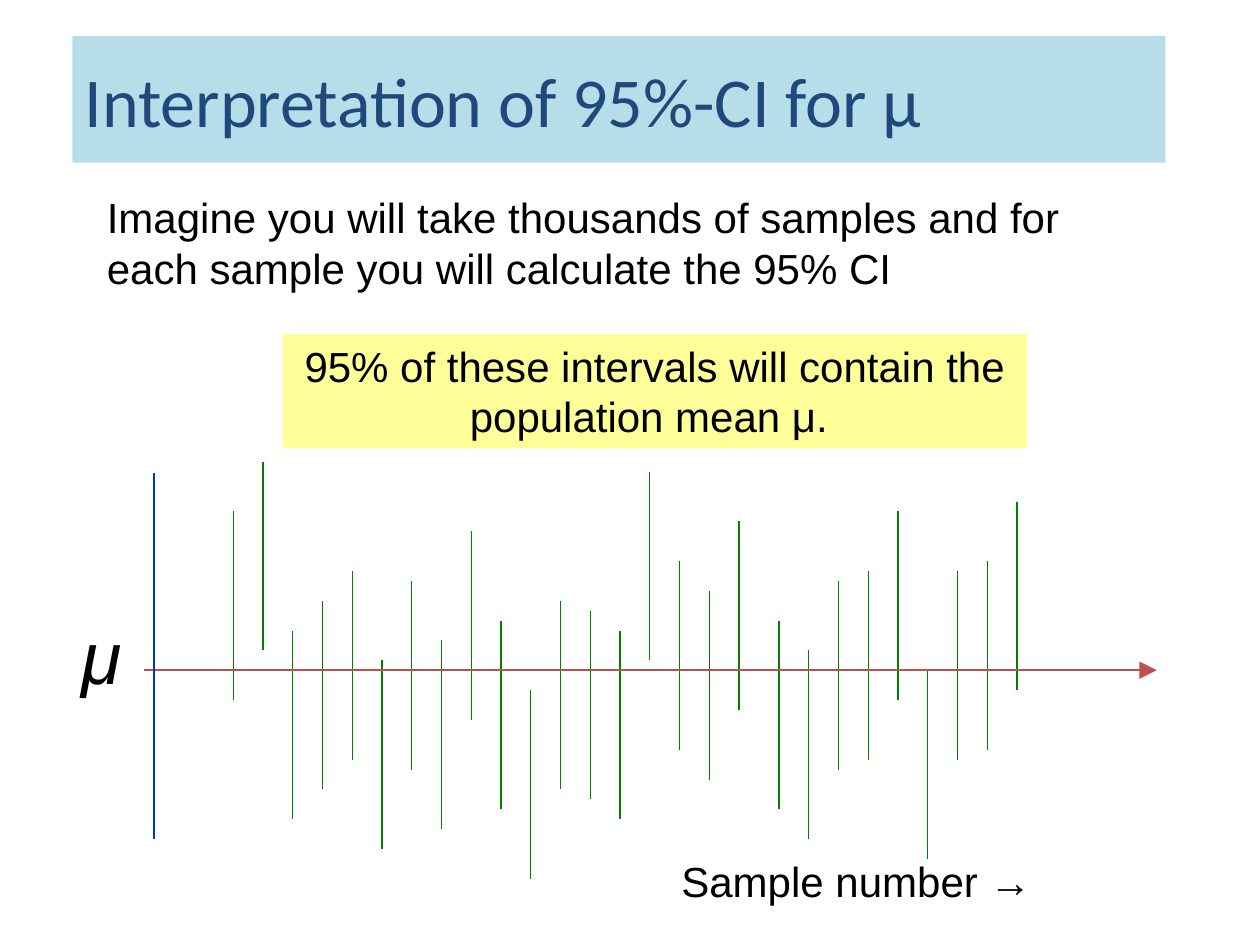
from dataclasses import dataclass

from lxml.etree import SubElement
from pptx import Presentation
from pptx.dml.color import RGBColor
from pptx.enum.shapes import MSO_CONNECTOR, MSO_SHAPE
from pptx.enum.text import MSO_ANCHOR, PP_ALIGN
from pptx.oxml.ns import qn
from pptx.slide import Slide
from pptx.util import Pt

COLORS = {
    "title_fill": "B7DEE8",
    "title_text": "1F497D",
    "note_fill": "FFFF99",
    "text": "000000",
    "interval": "008000",
    "mean": "C0504D",
    "axis": "0033CC",
}
MEAN_Y = 383
LEVEL_STEP = 5.67
INTERVAL_LENGTH = 107.8
INTERVAL_GAP = 17


@dataclass
class TextBlock:
    text: str
    left: float
    top: float
    width: float
    height: float
    size: float = 24
    font: str = "Arial"
    color: str = "text"
    fill: str | None = None
    align: PP_ALIGN = PP_ALIGN.LEFT
    anchor: MSO_ANCHOR = MSO_ANCHOR.TOP
    space_before: float = 0
    italic: bool = False
    inset: bool = True


@dataclass
class Line:
    start_x: float
    start_y: float
    end_x: float
    end_y: float
    color: str
    width: float
    arrow: bool = False


@dataclass
class IntervalRun:
    left: float
    levels: tuple[int, ...]


TITLE = TextBlock("Interpretation of 95%-CI for µ", 41.3, 20.5, 624.6, 72.5, size=40,
                  font="Calibri", color="title_text", fill="title_fill",
                  anchor=MSO_ANCHOR.MIDDLE)
LABELS = (
    TextBlock("Imagine you will take thousands of samples and for each sample "
              "you will calculate the 95% CI", 54, 106, 607, 65.5),
    TextBlock("μ", 46.8, 349.2, 49.7, 60.5, size=42, space_before=5,
              italic=True, inset=False),
    TextBlock("Sample number →", 382.3, 485.3, 295.2, 36, space_before=3),
)
NOTE = TextBlock("95% of these intervals will contain the population mean μ. ",
                 161.5, 190.8, 425.3, 65.5, fill="note_fill",
                 align=PP_ALIGN.CENTER, space_before=3)
INTERVAL_RUNS = (
    IntervalRun(133.3, (16, 21, 4, 7, 10, 1, 9, 3, 14, 5, -2, 7, 6, 4, 20, 11, 8, 15)),
    IntervalRun(445.1, (5, 2, 9, 10, 16, 0, 10, 11, 17)),
)
MEAN_LINE = Line(82.2, MEAN_Y, 661, MEAN_Y, "mean", 1.25, arrow=True)
AXIS_LINE = Line(87.9, 270, 87.9, 479.5, "axis", 1)


def color_of(name: str) -> RGBColor:
    """Return the named palette colour."""
    return RGBColor.from_string(COLORS[name])


def draw_text(slide: Slide, block: TextBlock) -> None:
    """Draw a text box, or a filled rectangle when the block has a fill."""
    bounds = (Pt(block.left), Pt(block.top), Pt(block.width), Pt(block.height))
    if block.fill:
        shape = slide.shapes.add_shape(MSO_SHAPE.RECTANGLE, *bounds)
        shape.shadow.inherit = False
        shape.fill.solid()
        shape.fill.fore_color.rgb = color_of(block.fill)
        shape.line.fill.background()
    else:
        shape = slide.shapes.add_textbox(*bounds)
    frame = shape.text_frame
    frame.text = block.text
    frame.word_wrap = True
    frame.vertical_anchor = block.anchor
    if not block.inset:
        frame.margin_left = frame.margin_right = Pt(0)
        frame.margin_top = frame.margin_bottom = Pt(0)
    paragraph = frame.paragraphs[0]
    paragraph.alignment = block.align
    paragraph.space_before = Pt(block.space_before)
    font = paragraph.runs[0].font
    font.name = block.font
    font.size = Pt(block.size)
    font.italic = block.italic
    font.color.rgb = color_of(block.color)


def draw_line(slide: Slide, line: Line) -> None:
    """Draw a straight connector with an optional arrowhead."""
    connector = slide.shapes.add_connector(
        MSO_CONNECTOR.STRAIGHT, Pt(line.start_x), Pt(line.start_y),
        Pt(line.end_x), Pt(line.end_y))
    connector.line.color.rgb = color_of(line.color)
    connector.line.width = Pt(line.width)
    if line.arrow:
        SubElement(connector.line._get_or_add_ln(), qn("a:tailEnd"),
                   type="triangle", w="lg", len="lg")
    SubElement(connector._element.spPr, qn("a:effectLst"))


def draw_intervals(slide: Slide, run: IntervalRun) -> None:
    """Draw evenly spaced intervals whose tops are set by their levels."""
    for index, level in enumerate(run.levels):
        x = run.left + index * INTERVAL_GAP
        top = MEAN_Y - level * LEVEL_STEP
        draw_line(slide, Line(x, top, x, top + INTERVAL_LENGTH, "interval", 0.75))


def main() -> None:
    """Build and save the confidence interval slide."""
    presentation = Presentation()
    presentation.slide_width = Pt(720)
    presentation.slide_height = Pt(540)
    slide = presentation.slides.add_slide(presentation.slide_layouts[6])
    draw_text(slide, TITLE)
    for run in INTERVAL_RUNS:
        draw_intervals(slide, run)
    draw_line(slide, MEAN_LINE)
    for label in LABELS:
        draw_text(slide, label)
    draw_line(slide, AXIS_LINE)
    draw_text(slide, NOTE)
    presentation.save("out.pptx")


if __name__ == "__main__":
    main()
